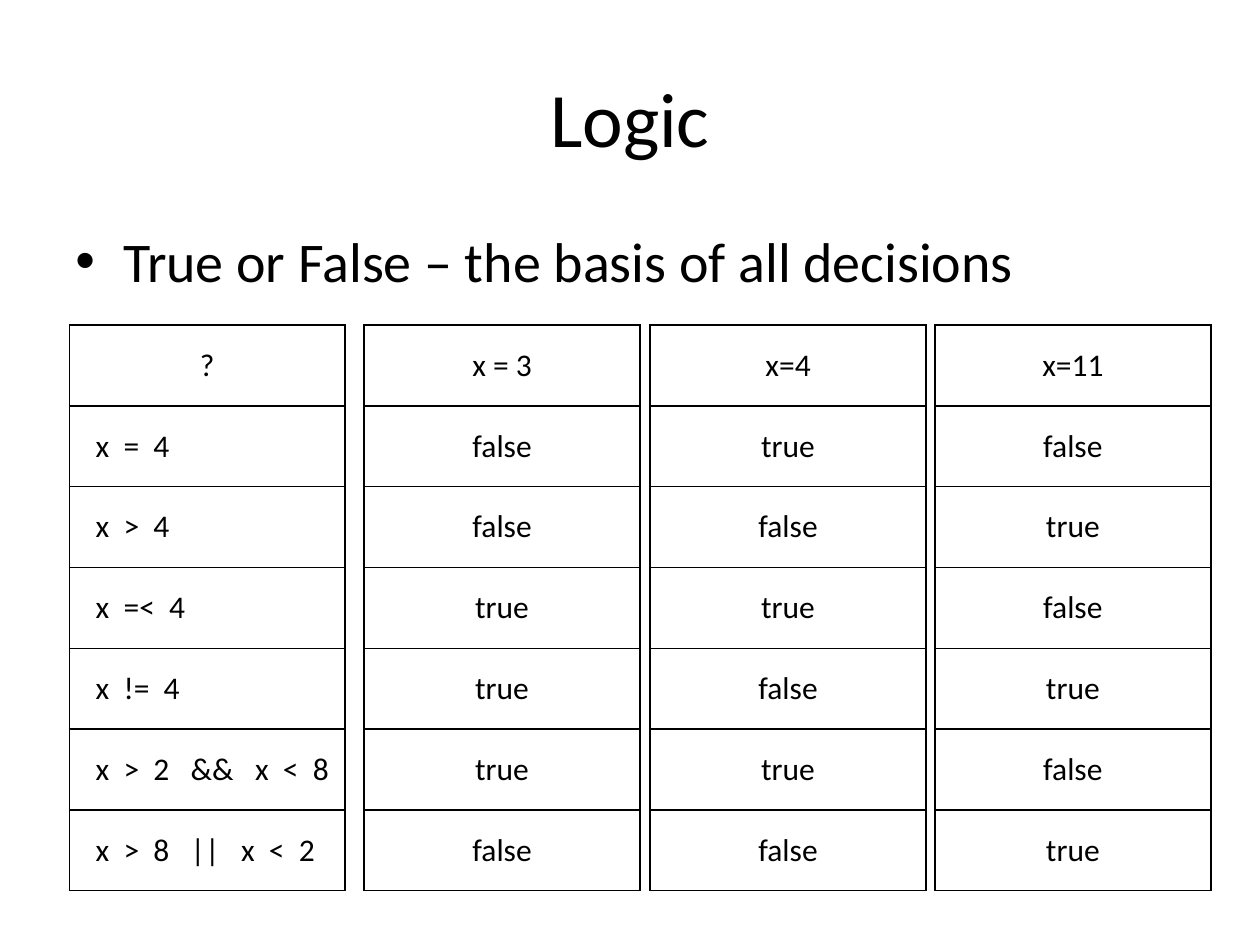
"""Builds a slide of truth tables for simple conditions."""
from lxml import etree
from pptx import Presentation
from pptx import util as u
from pptx.dml.color import RGBColor
from pptx.enum import text
from pptx.oxml.ns import qn

TITLE = "Logic"
POINT = "True or False – the basis of all decisions"
TABLES = [
    (0.55, ["?", "x  =  4", "x  >  4", "x  =<  4", "x  !=  4",
            "x  >  2   &&   x  <  8", "x  >  8   ||   x  <  2"]),
    (2.89, ["x = 3", "false", "false", "true", "true", "true", "false"]),
    (5.16, ["x=4", "true", "false", "true", "false", "true", "false"]),
    (7.42, ["x=11", "false", "true", "false", "true", "false", "true"]),
]
TOP, WIDE, HIGH, INSET = 2.58, 2.19, 4.49, 0.21
THEME = {"font": "Calibri", "ink": "000000", "title": 44, "body": 32,
         "cell": 18, "line": 1}


def style(para, size, align):
    para.alignment = align
    para.font.name = THEME["font"]
    para.font.size = u.Pt(THEME[size])
    para.font.color.rgb = RGBColor.from_string(THEME["ink"])


def border(cell):
    props = cell._tc.get_or_add_tcPr()
    for spot, side in enumerate(("lnL", "lnR", "lnT", "lnB")):
        line = etree.Element(qn(f"a:{side}"), w=str(u.Pt(THEME["line"])))
        fill = etree.SubElement(line, qn("a:solidFill"))
        etree.SubElement(fill, qn("a:srgbClr"), val=THEME["ink"])
        props.insert(spot, line)


def add_title(slide):
    box = slide.shapes.title
    box.left, box.top, box.width, box.height = map(u.Inches, (0.5, 0.3, 9, 1.25))
    frame = box.text_frame
    frame.text = TITLE
    frame.vertical_anchor = text.MSO_ANCHOR.MIDDLE
    style(frame.paragraphs[0], "title", text.PP_ALIGN.CENTER)


def add_point(slide):
    box = slide.shapes.add_textbox(*map(u.Inches, (0.5, 1.75, 9, 4.95)))
    frame = box.text_frame
    frame.word_wrap = True
    frame.text = POINT
    para = frame.paragraphs[0]
    style(para, "body", text.PP_ALIGN.LEFT)
    para.space_before = u.Pt(THEME["body"] * 0.2)
    props = para._p.get_or_add_pPr()
    props.set("marL", str(u.Inches(0.38)))
    props.set("indent", str(-u.Inches(0.38)))
    etree.SubElement(props, qn("a:buFont"), typeface="Arial")
    etree.SubElement(props, qn("a:buChar"), char="•")


def add_table(slide, left, words, rules):
    spot = map(u.Inches, (left, TOP, WIDE, HIGH))
    table = slide.shapes.add_table(len(words), 1, *spot).table
    table.first_row = table.horz_banding = False
    for row, word in enumerate(words):
        cell = table.cell(row, 0)
        cell.text = word
        cell.vertical_anchor = text.MSO_ANCHOR.MIDDLE
        cell.fill.background()
        align = text.PP_ALIGN.CENTER
        if rules and row:
            align = text.PP_ALIGN.LEFT
            cell.margin_left = u.Inches(INSET)
        style(cell.text_frame.paragraphs[0], "cell", align)
        border(cell)


def main():
    deck = Presentation()
    deck.slide_width, deck.slide_height = u.Inches(10), u.Inches(7.5)
    slide = deck.slides.add_slide(deck.slide_layouts[5])
    add_title(slide)
    add_point(slide)
    for col, (left, words) in enumerate(TABLES):
        add_table(slide, left, words, col == 0)
    deck.save("out.pptx")


if __name__ == "__main__":
    main()
